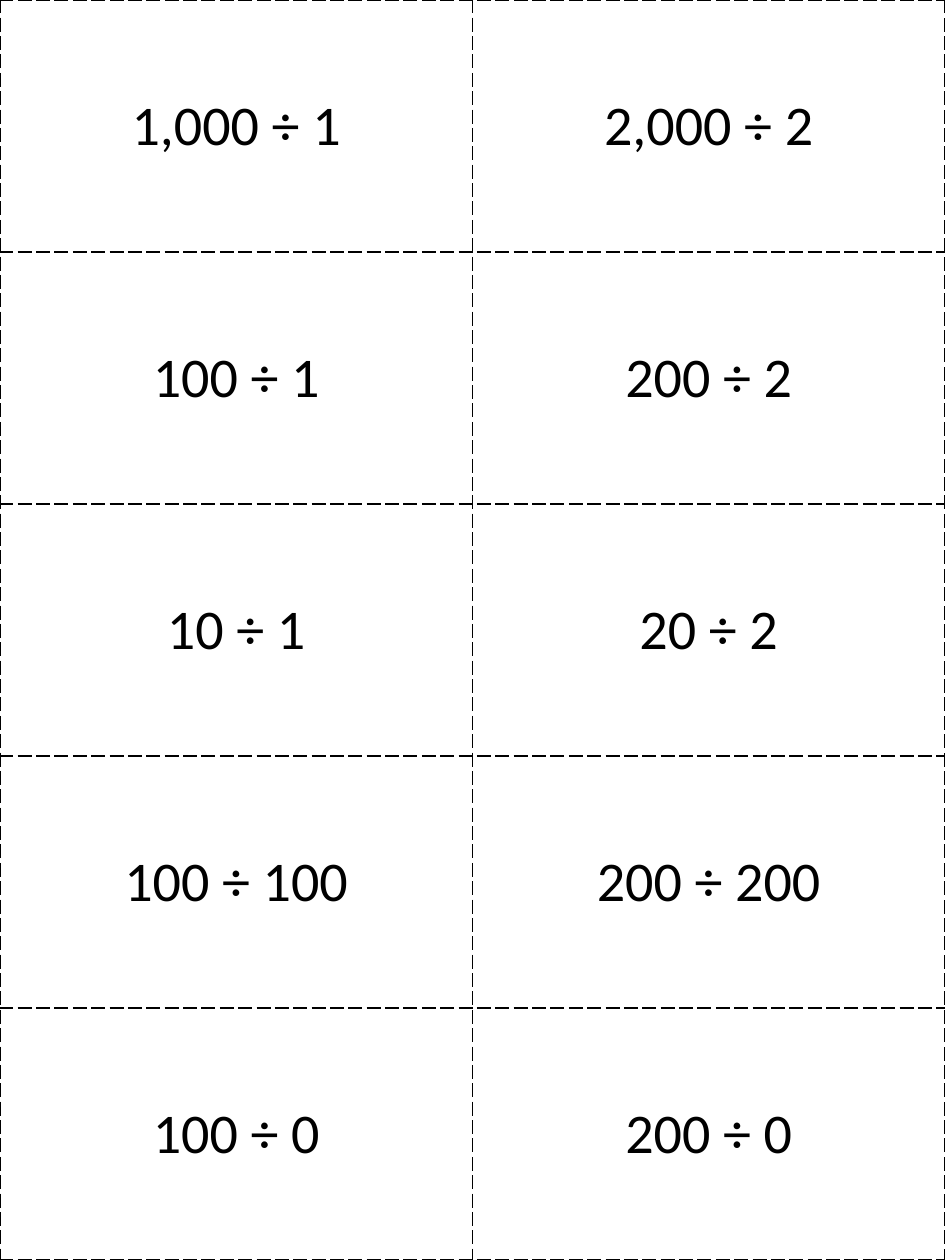
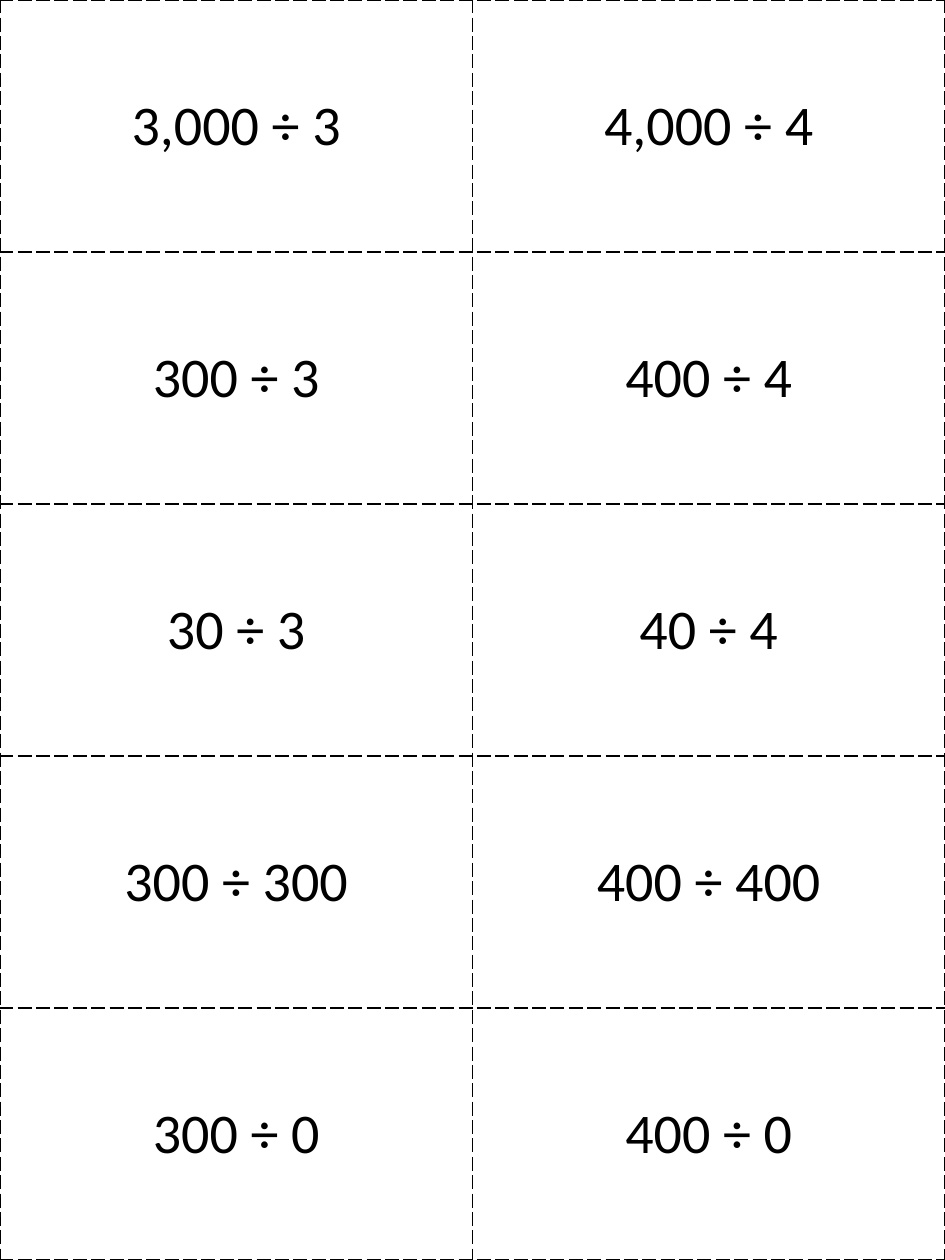
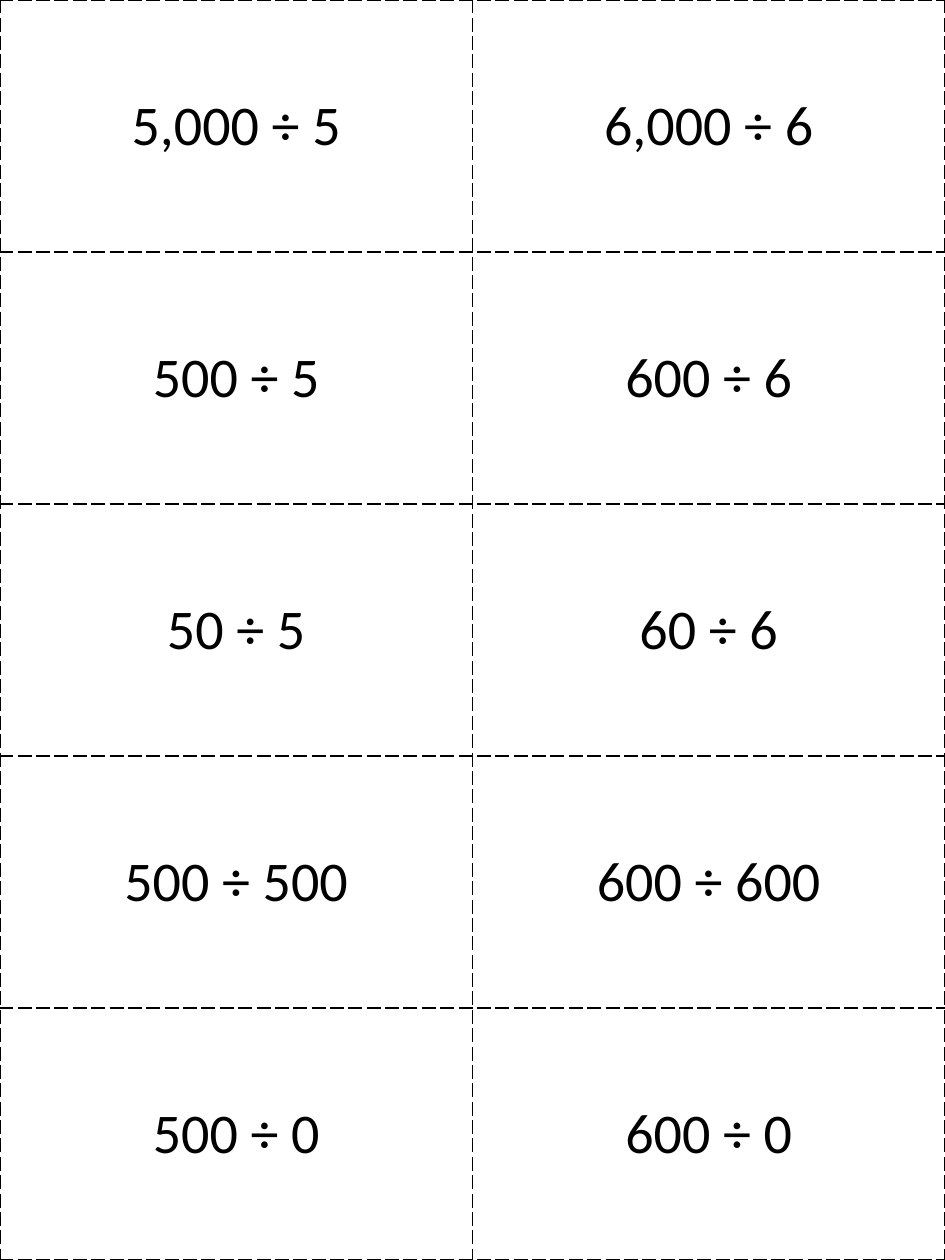
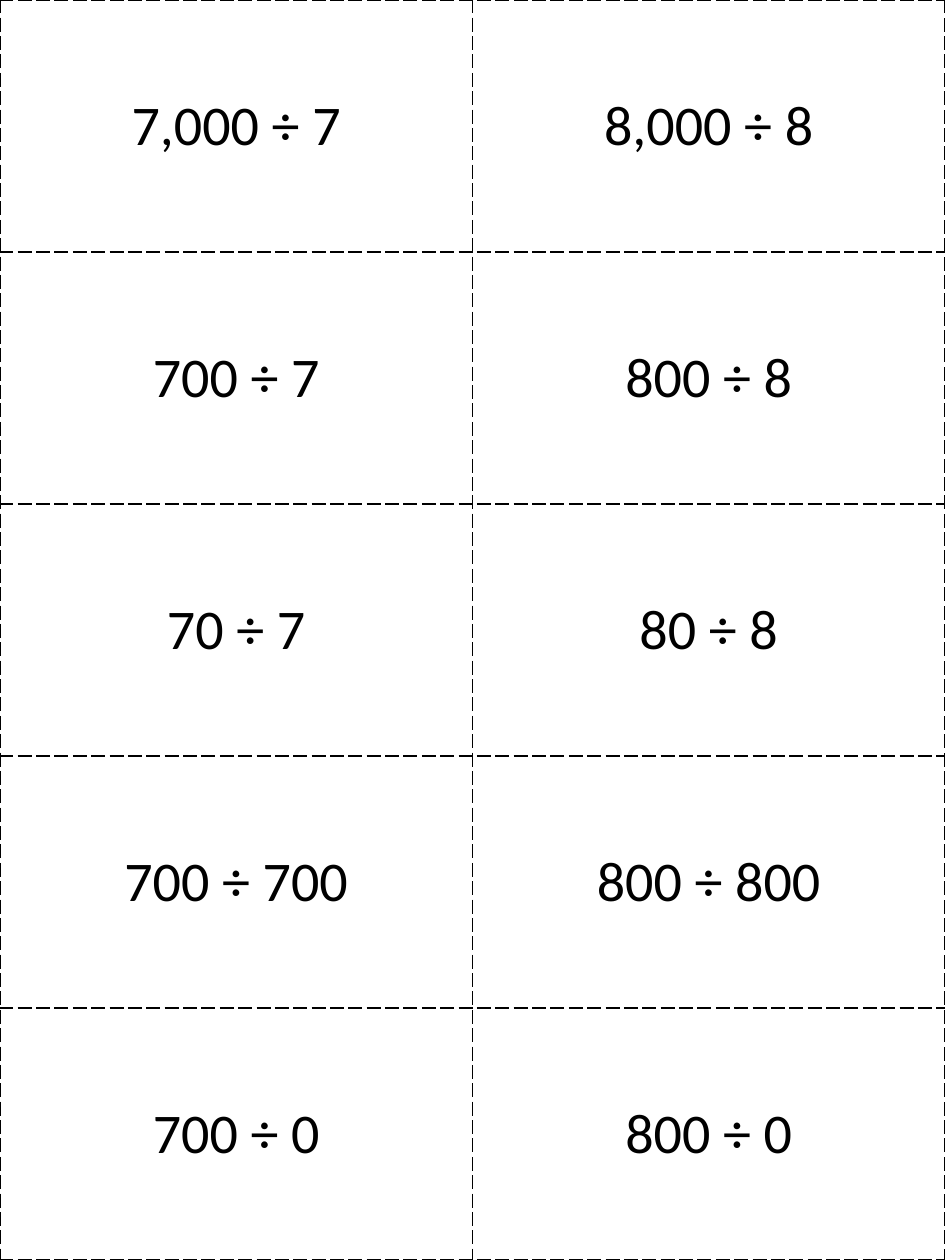
from lxml.etree import SubElement
from pptx import Presentation
from pptx.dml.color import RGBColor
from pptx.enum.text import MSO_ANCHOR, PP_ALIGN
from pptx.oxml.ns import qn
from pptx.util import Inches, Pt

# Content: each pair of digits fills one page, one column per digit
DIGIT_PAIRS = [(1, 2), (3, 4), (5, 6), (7, 8)]
DIVISIONS = [
    "{n},000 ÷ {n}",
    "{n}00 ÷ {n}",
    "{n}0 ÷ {n}",
    "{n}00 ÷ {n}00",
    "{n}00 ÷ 0",
]

# Shared style
COLORS = {"ink": "000000", "paper": "FFFFFF"}
FONT = "Calibri"
PAGE_WIDTH, PAGE_HEIGHT = Inches(7.5), Inches(10)
BLANK_LAYOUT = 6


def write_text(cell, text, size=32, color="ink", align=PP_ALIGN.CENTER):
    cell.vertical_anchor = MSO_ANCHOR.MIDDLE
    para = cell.text_frame.paragraphs[0]
    para.alignment = align
    span = para.add_run()
    span.text = text
    span.font.name = FONT
    span.font.size = Pt(size)
    span.font.color.rgb = RGBColor.from_string(COLORS[color])


def add_cut_lines(cell, width=1, color="ink", dash="lgDash"):
    properties = cell._tc.get_or_add_tcPr()
    for side in ("lnL", "lnR", "lnT", "lnB"):
        line = SubElement(properties, qn(f"a:{side}"), w=str(Pt(width)))
        fill = SubElement(line, qn("a:solidFill"))
        SubElement(fill, qn("a:srgbClr"), val=COLORS[color])
        SubElement(line, qn("a:prstDash"), val=dash)


def add_card_page(deck, digits):
    page = deck.slides.add_slide(deck.slide_layouts[BLANK_LAYOUT])
    frame = page.shapes.add_table(
        len(DIVISIONS), len(digits), 0, 0, PAGE_WIDTH, PAGE_HEIGHT
    )
    table = frame.table
    table.first_row = table.horz_banding = False

    # One card per cell
    for row, division in enumerate(DIVISIONS):
        for column, digit in enumerate(digits):
            cell = table.cell(row, column)
            write_text(cell, division.format(n=digit))
            add_cut_lines(cell)
            cell.fill.background()


def main():
    deck = Presentation()
    deck.slide_width, deck.slide_height = PAGE_WIDTH, PAGE_HEIGHT
    paper = deck.slide_master.background.fill
    paper.solid()
    paper.fore_color.rgb = RGBColor.from_string(COLORS["paper"])
    for digits in DIGIT_PAIRS:
        add_card_page(deck, digits)
    deck.save("out.pptx")


if __name__ == "__main__":
    main()
